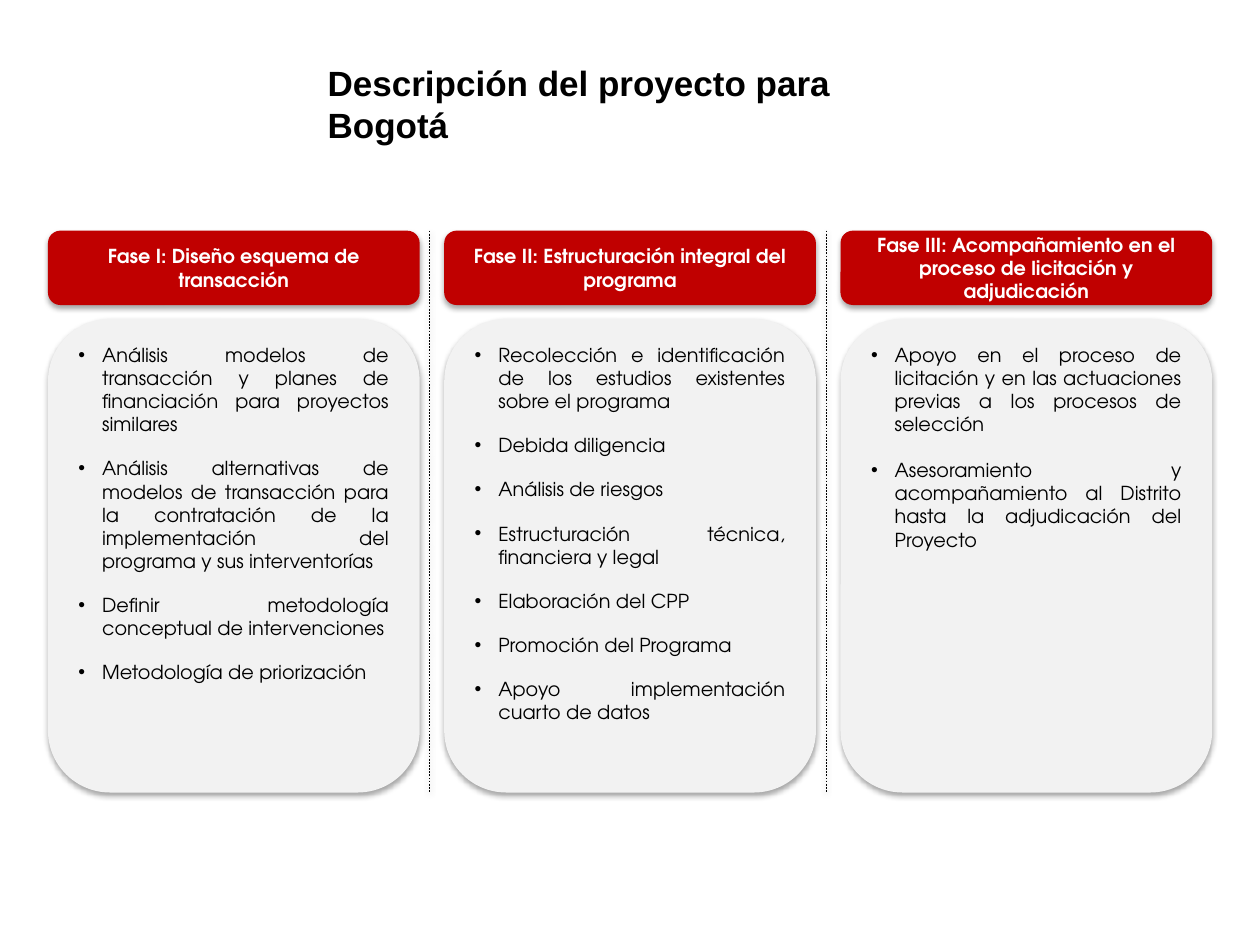
from lxml import etree
from pptx import Presentation
from pptx.dml.color import RGBColor
from pptx.enum import dml, shapes, text
from pptx.oxml import ns
from pptx.util import Pt

BODY_FONT = "TeX Gyre Adventor"
HEADER_HEIGHT = 42.5
PANEL_OFFSET = 50.5
INDENT = 13.5

PHASES = [
    ("Fase I: Diseño esquema de transacción", 12, [
        "Análisis modelos de transacción y planes de financiación para proyectos similares",
        "Análisis alternativas de modelos de transacción para la contratación de la "
        "implementación del programa y sus interventorías",
        "Definir metodología conceptual de intervenciones",
        "Metodología de priorización",
    ]),
    ("Fase II: Estructuración integral del programa", 12, [
        "Recolección e identificación de los estudios existentes sobre el programa",
        "Debida diligencia",
        "Análisis de riesgos",
        "Estructuración técnica, financiera y legal",
        "Elaboración del CPP",
        "Promoción del Programa",
        "Apoyo implementación cuarto de datos",
    ]),
    ("Fase III: Acompañamiento en el proceso de licitación y adjudicación", 13, [
        "Apoyo en el proceso de licitación y en las actuaciones previas a los procesos de selección",
        "Asesoramiento y acompañamiento al Distrito hasta la adjudicación del Proyecto",
    ]),
]


def color(value):
    return RGBColor.from_string(value)


def add_shadow(part, blur, distance, opacity):
    properties = part._element.spPr
    effects = properties.find(ns.qn("a:effectLst"))
    if effects is None:
        effects = etree.SubElement(properties, ns.qn("a:effectLst"))
    shadow = etree.SubElement(effects, ns.qn("a:outerShdw"), blurRad=str(Pt(blur)),
                              dist=str(Pt(distance)), dir="5400000", rotWithShape="0")
    black = etree.SubElement(shadow, ns.qn("a:srgbClr"), val="000000")
    etree.SubElement(black, ns.qn("a:alpha"), val=str(opacity * 1000))


def add_bullet(paragraph):
    properties = paragraph._p.get_or_add_pPr()
    properties.set("marL", str(Pt(INDENT)))
    properties.set("indent", str(-Pt(INDENT)))
    etree.SubElement(properties, ns.qn("a:buFont"), typeface="Arial")
    etree.SubElement(properties, ns.qn("a:buChar"), char="•")


def write(frame, lines, font=BODY_FONT, size=11, ink="000000", bold=False,
          align=text.PP_ALIGN.LEFT, anchor=text.MSO_ANCHOR.MIDDLE, bullets=False, gap=0):
    frame.word_wrap = True
    frame.auto_size = text.MSO_AUTO_SIZE.NONE
    frame.vertical_anchor = anchor
    for index, line in enumerate(lines):
        paragraph = frame.add_paragraph() if index else frame.paragraphs[0]
        paragraph.alignment = align
        if index and gap:
            paragraph.space_before = Pt(gap)
        if bullets:
            add_bullet(paragraph)
        run = paragraph.add_run()
        run.text = line
        run.font.name = font
        run.font.size = Pt(size)
        run.font.bold = bold
        run.font.color.rgb = color(ink)


def add_card(slide, left, top, width, height, fill):
    card = slide.shapes.add_shape(shapes.MSO_SHAPE.ROUNDED_RECTANGLE,
                                  Pt(left), Pt(top), Pt(width), Pt(height))
    card.fill.solid()
    card.fill.fore_color.rgb = color(fill)
    card.line.fill.background()
    card.shadow.inherit = False
    add_shadow(card, 3.1, 1.8, 35)
    return card


def add_title(slide, left, top, width, height):
    title = slide.shapes.title
    title.left, title.top, title.width, title.height = map(Pt, (left, top, width, height))
    write(title.text_frame, ["Descripción del proyecto para Bogotá"],
          font="Arial", size=20, bold=True)


def add_phase(slide, left, top, width, height, heading, gap, tasks):
    header = add_card(slide, left, top, width, HEADER_HEIGHT, "C00000")
    write(header.text_frame, [heading], ink="FFFFFF", bold=True, align=text.PP_ALIGN.CENTER)
    panel = add_card(slide, left, top + PANEL_OFFSET, width, height - PANEL_OFFSET, "F2F2F2")
    write(panel.text_frame, tasks, align=text.PP_ALIGN.JUSTIFY,
          anchor=text.MSO_ANCHOR.TOP, bullets=True, gap=gap)


def add_divider(slide, left, top, height):
    divider = slide.shapes.add_connector(shapes.MSO_CONNECTOR.STRAIGHT,
                                         Pt(left), Pt(top), Pt(left), Pt(top + height))
    divider.line.color.rgb = color("000000")
    divider.line.width = Pt(0.25)
    divider.line.dash_style = dml.MSO_LINE.DASH
    add_shadow(divider, 3.1, 1.6, 38)


def add_phases(slide, left, top, width, height, column=212.4):
    pitch = (width - column) / (len(PHASES) - 1)
    for index, phase in enumerate(PHASES):
        add_phase(slide, left + index * pitch, top, column, height, *phase)
    for index in range(1, len(PHASES)):
        add_divider(slide, left + index * pitch - 8.4, top, height)


def main():
    deck = Presentation()
    deck.slide_width, deck.slide_height = Pt(720), Pt(540)
    slide = deck.slides.add_slide(deck.slide_layouts[5])
    add_title(slide, 180, 14.4, 324.7, 90)
    add_phases(slide, 27.4, 131.8, 665.3, 321.1)
    deck.save("out.pptx")


if __name__ == "__main__":
    main()
